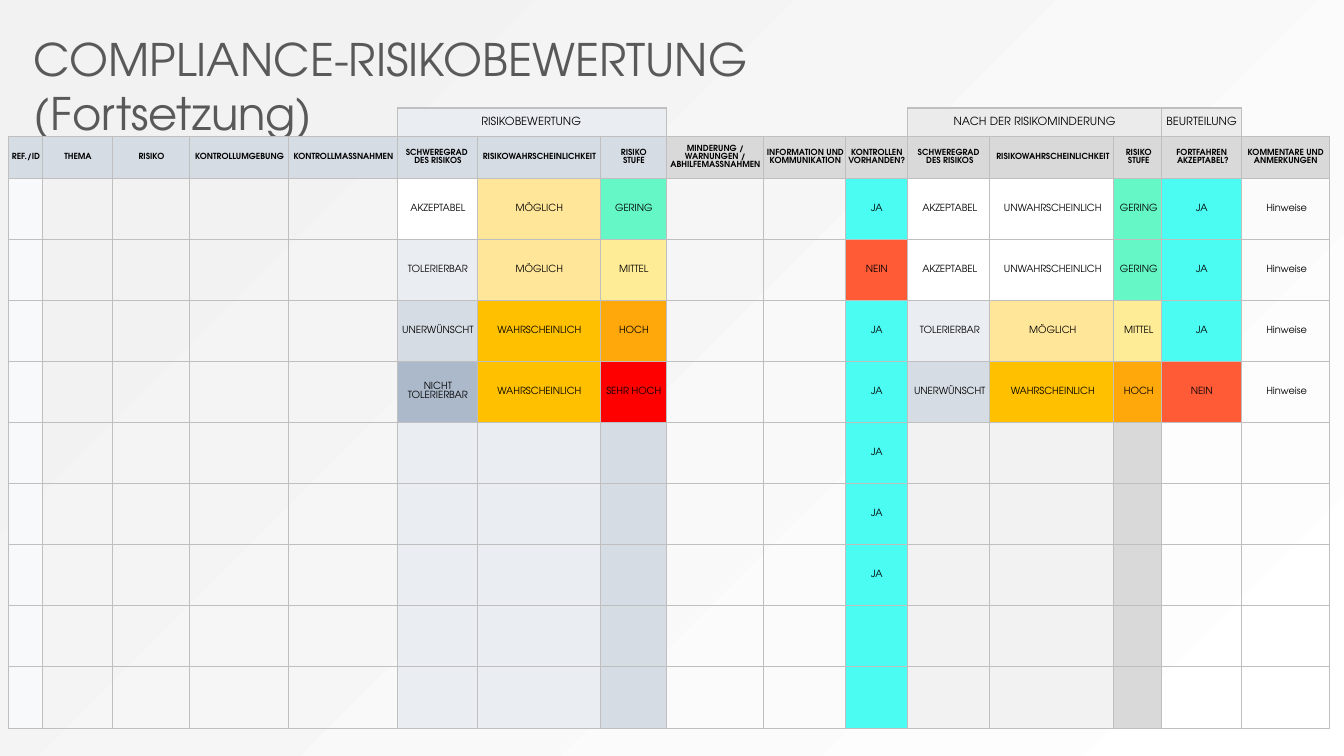
import lxml.etree
import pptx
import pptx.dml.color
import pptx.enum.text
import pptx.oxml.ns
import pptx.util

RGB = pptx.dml.color.RGBColor
WHITE = RGB(0xFF, 0xFF, 0xFF)
BLACK = RGB(0, 0, 0)
TITLE_GREY = RGB(0x59, 0x59, 0x59)
BORDER = RGB(0xBF, 0xBF, 0xBF)
FOG = RGB(0xF2, 0xF2, 0xF2)
PALE_GREY = RGB(0xEB, 0xEB, 0xEB)
GREY = RGB(0xD9, 0xD9, 0xD9)
ICE = RGB(0xF7, 0xF9, 0xFB)
PALE_BLUE = RGB(0xEA, 0xEE, 0xF3)
BLUE_GREY = RGB(0xD6, 0xDC, 0xE4)
STEEL = RGB(0xAC, 0xB9, 0xCA)
SAND = RGB(0xFF, 0xE6, 0x99)
YELLOW = RGB(0xFF, 0xEC, 0x97)
AMBER = RGB(0xFF, 0xC0, 0x00)
ORANGE = RGB(0xFF, 0xA8, 0x0B)
RED = RGB(0xFF, 0x00, 0x00)
CORAL = RGB(0xFF, 0x5B, 0x37)
GREEN = RGB(0x65, 0xF7, 0xC6)
CYAN = RGB(0x4B, 0xFC, 0xF2)

FONT = "TeX Gyre Adventor"
PX = 914400 / 100.8
NO_STYLE = "{2D5ABB26-0587-4C30-8999-92F81FD0307C}"
qn = pptx.oxml.ns.qn


def px(length):
    return pptx.util.Emu(round(length * PX))


def write(frame, text, size=7, bold=False, color=BLACK, align="CENTER"):
    para = frame.paragraphs[0]
    para.alignment = getattr(pptx.enum.text.PP_ALIGN, align)
    para.text = text
    for span in para.runs:
        span.font.name = FONT
        span.font.size = pptx.util.Pt(size)
        span.font.bold = bold
        span.font.color.rgb = color
    # Line breaks and empty paragraphs take the same size as the text
    for line_break in para._p.findall(qn("a:br")):
        lxml.etree.SubElement(line_break, qn("a:rPr"), sz=str(size * 100))
    lxml.etree.SubElement(para._p, qn("a:endParaRPr"), sz=str(size * 100))


deck = pptx.Presentation()
deck.slide_width = px(1344)
deck.slide_height = px(756)
page = deck.slides.add_slide(deck.slide_layouts[6])

# Background gradient
backdrop = page.background.fill
backdrop.gradient()
backdrop.gradient_angle = 135
for stop, position, color in zip(backdrop.gradient_stops, (0, 0.87), (WHITE, FOG)):
    stop.position = position
    stop.color.rgb = color

# Title
title = page.shapes.add_textbox(px(24), px(27), px(975), px(65)).text_frame
title.word_wrap = True
write(title, "COMPLIANCE-RISIKOBEWERTUNG (Fortsetzung)", size=32, color=TITLE_GREY, align="LEFT")

# Table content
column_widths = [34, 70, 77, 99, 109, 80, 123, 66, 97, 83, 62, 82, 124, 48, 80, 88]
row_heights = [28, 42] + [61] * 8 + [62]
groups = {  # first column: (text, last column, fill)
    5: ("RISIKOBEWERTUNG", 7, PALE_BLUE),
    11: ("NACH DER RISIKOMINDERUNG", 13, PALE_GREY),
    14: ("BEURTEILUNG", 14, PALE_GREY),
}
headings = [
    "REF./ID", "THEMA", "RISIKO", "KONTROLLUMGEBUNG", "KONTROLLMASSNAHMEN",
    "SCHWEREGRAD \vDES RISIKOS", "RISIKOWAHRSCHEINLICHKEIT", "RISIKO\vSTUFE",
    "MINDERUNG / WARNUNGEN / ABHILFEMASSNAHMEN", "INFORMATION UND KOMMUNIKATION",
    "KONTROLLEN VORHANDEN?", "SCHWEREGRAD \vDES RISIKOS", "RISIKOWAHRSCHEINLICHKEIT",
    "RISIKO\vSTUFE", "FORTFAHREN\v AKZEPTABEL?", "KOMMENTARE UND ANMERKUNGEN",
]
filled_columns = (5, 6, 7, 10, 11, 12, 13, 14, 15)
assessments = [
    ("AKZEPTABEL", "MÖGLICH", "GERING", "JA",
     "AKZEPTABEL", "UNWAHRSCHEINLICH", "GERING", "JA", "Hinweise"),
    ("TOLERIERBAR", "MÖGLICH", "MITTEL", "NEIN",
     "AKZEPTABEL", "UNWAHRSCHEINLICH", "GERING", "JA", "Hinweise"),
    ("UNERWÜNSCHT", "WAHRSCHEINLICH", "HOCH", "JA",
     "TOLERIERBAR", "MÖGLICH", "MITTEL", "JA", "Hinweise"),
    ("NICHT TOLERIERBAR", "WAHRSCHEINLICH", "SEHR HOCH", "JA",
     "UNERWÜNSCHT", "WAHRSCHEINLICH", "HOCH", "NEIN", "Hinweise"),
] + [("", "", "", "JA")] * 3 + [()] * 2
rating_fills = {
    "AKZEPTABEL": WHITE, "TOLERIERBAR": PALE_BLUE, "UNERWÜNSCHT": BLUE_GREY,
    "NICHT TOLERIERBAR": STEEL, "UNWAHRSCHEINLICH": WHITE, "MÖGLICH": SAND,
    "WAHRSCHEINLICH": AMBER, "GERING": GREEN, "MITTEL": YELLOW, "HOCH": ORANGE,
    "SEHR HOCH": RED, "JA": CYAN, "NEIN": CORAL,
}
column_fills = {0: ICE, 5: PALE_BLUE, 6: PALE_BLUE, 7: BLUE_GREY,
                10: CYAN, 11: FOG, 12: FOG, 13: GREY}

# Table frame
frame = page.shapes.add_table(len(row_heights), len(column_widths), px(8), px(108),
                              px(sum(column_widths)), px(sum(row_heights)))
table = frame.table
table.first_row = False
table.horz_banding = False
table._tbl.tblPr.find(qn("a:tableStyleId")).text = NO_STYLE
for column, width in zip(table.columns, column_widths):
    column.width = px(width)
for row, height in zip(table.rows, row_heights):
    row.height = px(height)
for first, (text, last, fill) in groups.items():
    if last > first:
        table.cell(0, first).merge(table.cell(0, last))

# Cells
grouped = [c for first, (text, last, fill) in groups.items() for c in range(first, last + 1)]
for r in range(len(row_heights)):
    for c in range(len(column_widths)):
        cell = table.cell(r, c)
        size, bold, inset = 7, False, 2
        if r == 0:
            text, last, fill = groups.get(c, ("", c, None))
            size, inset = 8, 0
        elif r == 1:
            text, fill = headings[c], BLUE_GREY if c < 8 else GREY
            size, bold = 6, True
        else:
            text = dict(zip(filled_columns, assessments[r - 2])).get(c, "")
            fill = rating_fills.get(text, column_fills.get(c))
        cell.margin_left = px(0 if c in (10, 14) or bold and c == 15 else inset)
        cell.margin_right = cell.margin_top = cell.margin_bottom = 0
        cell.vertical_anchor = pptx.enum.text.MSO_ANCHOR.MIDDLE
        write(cell.text_frame, text, size=size, bold=bold)

        # The top row is framed only around its group headings
        sides = "LRTB"
        if r == 0 and c not in grouped:
            sides = "B" + "R" * (c + 1 in grouped) + "L" * (c - 1 in grouped)
        properties = cell._tc.get_or_add_tcPr()
        for side in "LRTB":
            weight = 12700 if r == 0 and side == "T" else 6350
            line = lxml.etree.SubElement(properties, qn("a:ln" + side), w=str(weight))
            if side in sides:
                paint = lxml.etree.SubElement(line, qn("a:solidFill"))
                lxml.etree.SubElement(paint, qn("a:srgbClr"), val=str(BORDER))
            else:
                lxml.etree.SubElement(line, qn("a:noFill"))
        if fill is None:
            cell.fill.background()
        else:
            cell.fill.solid()
            cell.fill.fore_color.rgb = fill

deck.save("out.pptx")
